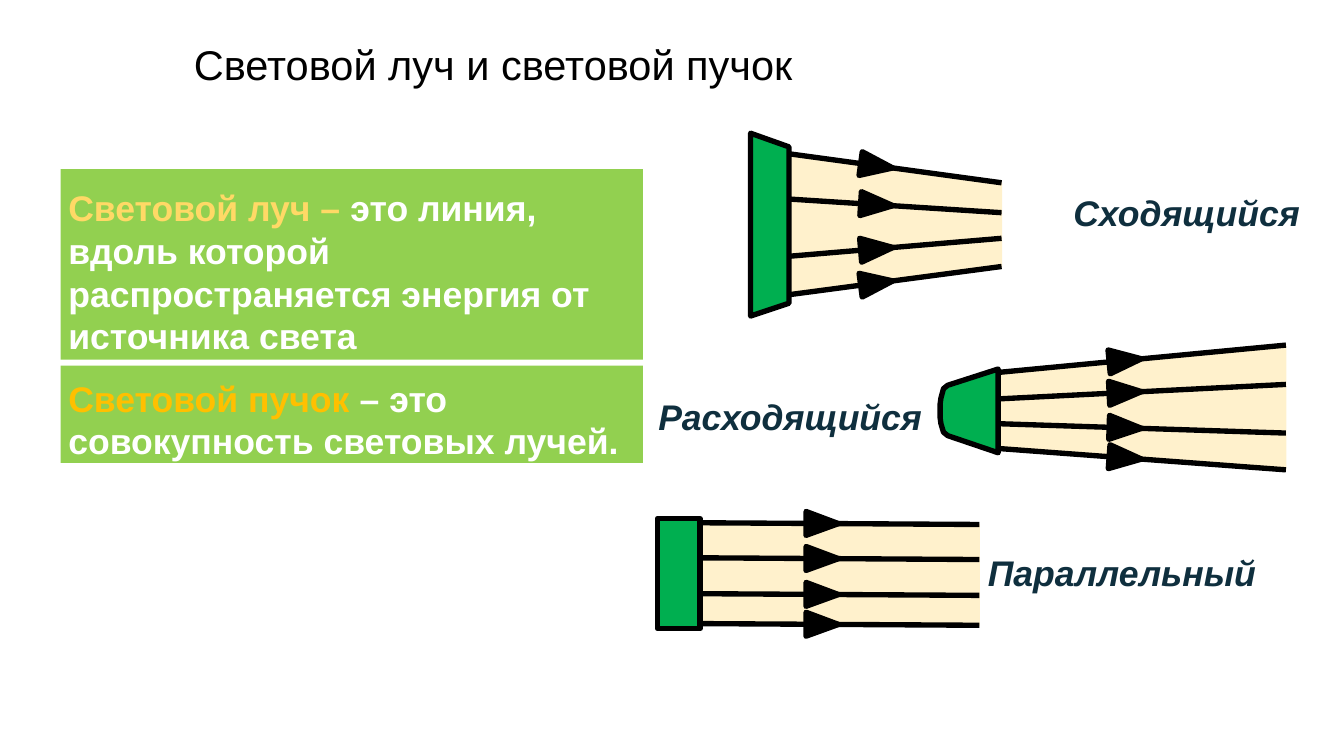
from collections import namedtuple
from math import atan2, cos, sin

from lxml.etree import SubElement
from pptx import Presentation
from pptx.dml.color import RGBColor
from pptx.enum.shapes import MSO_CONNECTOR, MSO_SHAPE
from pptx.enum.text import MSO_ANCHOR, PP_ALIGN
from pptx.oxml.ns import qn
from pptx.util import Inches, Pt

BLACK = RGBColor(0x00, 0x00, 0x00)
WHITE = RGBColor(0xFF, 0xFF, 0xFF)
PANEL_GREEN = RGBColor(0x92, 0xD0, 0x50)
LAMP_GREEN = RGBColor(0x00, 0xAF, 0x50)
LIGHT = RGBColor(0xFF, 0xF1, 0xCC)
PALE_GOLD = RGBColor(0xFF, 0xD9, 0x66)
GOLD = RGBColor(0xFF, 0xC0, 0x00)
NAVY = RGBColor(0x0F, 0x2F, 0x3E)

STROKE = 4.5
ARROW_LENGTH = 0.38
ARROW_HALF_WIDTH = 0.14

Box = namedtuple("Box", "left top width height")


def place(box):
    """Return the box as slide lengths."""
    return [Inches(value) for value in box]


def write(shape, spans, size, bold=False, italic=False, indent=0.01, top=0.01):
    """Fill a shape with one left-aligned paragraph of coloured spans."""
    frame = shape.text_frame
    frame.word_wrap = True
    frame.vertical_anchor = MSO_ANCHOR.TOP
    frame.margin_left, frame.margin_top = Inches(indent), Inches(top)
    frame.margin_right = frame.margin_bottom = 0
    para = frame.paragraphs[0]
    para.alignment = PP_ALIGN.LEFT
    for text, color in spans:
        span = para.add_run()
        span.text = text
        span.font.name = "Arial"
        span.font.size = Pt(size)
        span.font.bold = bold
        span.font.italic = italic
        span.font.color.rgb = color


def paint(shape, fill, line, width):
    """Give a shape a flat fill and outline."""
    shape.shadow.inherit = False
    shape.fill.solid()
    shape.fill.fore_color.rgb = fill
    shape.line.color.rgb = line
    shape.line.width = Pt(width)


def polygon(page, box, points, fill, line=BLACK, width=STROKE):
    """Draw a closed outline whose points are relative to the box."""
    corners = [(Inches(box.left + x), Inches(box.top + y)) for x, y in points]
    builder = page.shapes.build_freeform(*corners[0])
    builder.add_line_segments(corners[1:])
    paint(builder.convert_to_shape(), fill, line, width)


def ray(page, box, start, end, arrow_x):
    """Draw one ray with a solid arrowhead whose base is at arrow_x."""
    (x1, y1), (x2, y2) = start, end
    line = page.shapes.add_connector(
        MSO_CONNECTOR.STRAIGHT,
        Inches(box.left + x1), Inches(box.top + y1),
        Inches(box.left + x2), Inches(box.top + y2))
    line.line.color.rgb = BLACK
    line.line.width = Pt(STROKE)
    SubElement(line._element.spPr, qn("a:effectLst"))

    angle = atan2(y2 - y1, x2 - x1)
    along, across = cos(angle), sin(angle)
    arrow_y = y1 + (y2 - y1) * (arrow_x - x1) / (x2 - x1)
    dx, dy = ARROW_HALF_WIDTH * across, ARROW_HALF_WIDTH * along
    tip = (arrow_x + ARROW_LENGTH * along, arrow_y + ARROW_LENGTH * across)
    base = [(arrow_x - dx, arrow_y + dy), (arrow_x + dx, arrow_y - dy)]
    polygon(page, box, [tip] + base, BLACK)


def beam(page, box, lamp_edge, arrow_x, heights):
    """Draw the lit area and its rays from the lamp edge to the box's right."""
    rays = [((lamp_edge, y1), (box.width, y2)) for y1, y2 in heights]
    outline = [*rays[0], *reversed(rays[-1])]
    polygon(page, box, outline, LIGHT, LIGHT, 1)
    for start, end in rays:
        ray(page, box, start, end, arrow_x)


def converging_beam(page, box):
    """Draw a beam that narrows away from its lamp."""
    beam(page, box, 0.45, 1.29,
         [(0.24, 0.58), (0.77, 0.93), (1.44, 1.23), (1.89, 1.56)])
    polygon(page, box, [(0, 0), (0.45, 0.16), (0.45, 1.99), (0, box.height)],
            LAMP_GREEN)


def diverging_beam(page, box):
    """Draw a beam that widens away from its round-backed lamp."""
    beam(page, box, 0.68, 1.98,
         [(0.32, 0), (0.63, 0.46), (0.92, 1.03), (1.21, 1.46)])
    polygon(page, box,
            [(0.68, 0.28), (0.09, 0.47), (0.04, 0.51), (0.01, 0.62),
             (0, 0.69), (0, 0.85), (0.01, 0.92), (0.04, 1.02),
             (0.09, 1.06), (0.68, 1.26)],
            LAMP_GREEN)


def parallel_beam(page, box):
    """Draw a beam of even width with a rectangular lamp."""
    lamp_width = 0.5
    beam(page, box, lamp_width, 1.74,
         [(y, y + 0.02) for y in (0.05, 0.46, 0.88, 1.23)])
    lamp = page.shapes.add_shape(
        MSO_SHAPE.RECTANGLE, *place(box._replace(width=lamp_width)))
    paint(lamp, LAMP_GREEN, BLACK, STROKE)


def title(page, box):
    """Write the slide title."""
    write(page.shapes.add_textbox(*place(box)),
          [("Световой луч и световой пучок", BLACK)], 35)


def definition(page, box, spans, top):
    """Draw a green panel with a definition."""
    panel = page.shapes.add_shape(MSO_SHAPE.RECTANGLE, *place(box))
    panel.shadow.inherit = False
    panel.fill.solid()
    panel.fill.fore_color.rgb = PANEL_GREEN
    panel.line.fill.background()
    write(panel, spans, 30, bold=True, indent=0.09, top=top)


def beam_label(page, box, text):
    """Write the name of a beam."""
    write(page.shapes.add_textbox(*place(box)), [(text, NAVY)], 30,
          bold=True, italic=True)


def main():
    """Build the slide about rays and beams of light."""
    deck = Presentation()
    deck.slide_width, deck.slide_height = Inches(15.74), Inches(8.85)
    page = deck.slides.add_slide(deck.slide_layouts[6])
    title(page, Box(2.26, 0.45, 8.99, 0.61))
    definition(page, Box(0.71, 1.98, 6.82, 2.23), [
        ("Световой луч – ", PALE_GOLD),
        ("это линия, вдоль которой распространяется энергия от источника света",
         WHITE)], 0.2)
    definition(page, Box(0.71, 4.28, 6.82, 1.14), [
        ("Световой пучок ", GOLD),
        ("– это совокупность световых лучей.", WHITE)], 0.13)
    converging_beam(page, Box(8.79, 1.56, 2.94, 2.14))
    diverging_beam(page, Box(11.01, 4.04, 4.05, 1.49))
    parallel_beam(page, Box(7.7, 6.07, 3.77, 1.29))
    beam_label(page, Box(12.56, 2.23, 2.81, 0.52), "Сходящийся")
    beam_label(page, Box(7.7, 4.61, 3.17, 0.52), "Расходящийся")
    beam_label(page, Box(11.56, 6.44, 3.28, 0.52), "Параллельный")
    deck.save("out.pptx")


if __name__ == "__main__":
    main()
